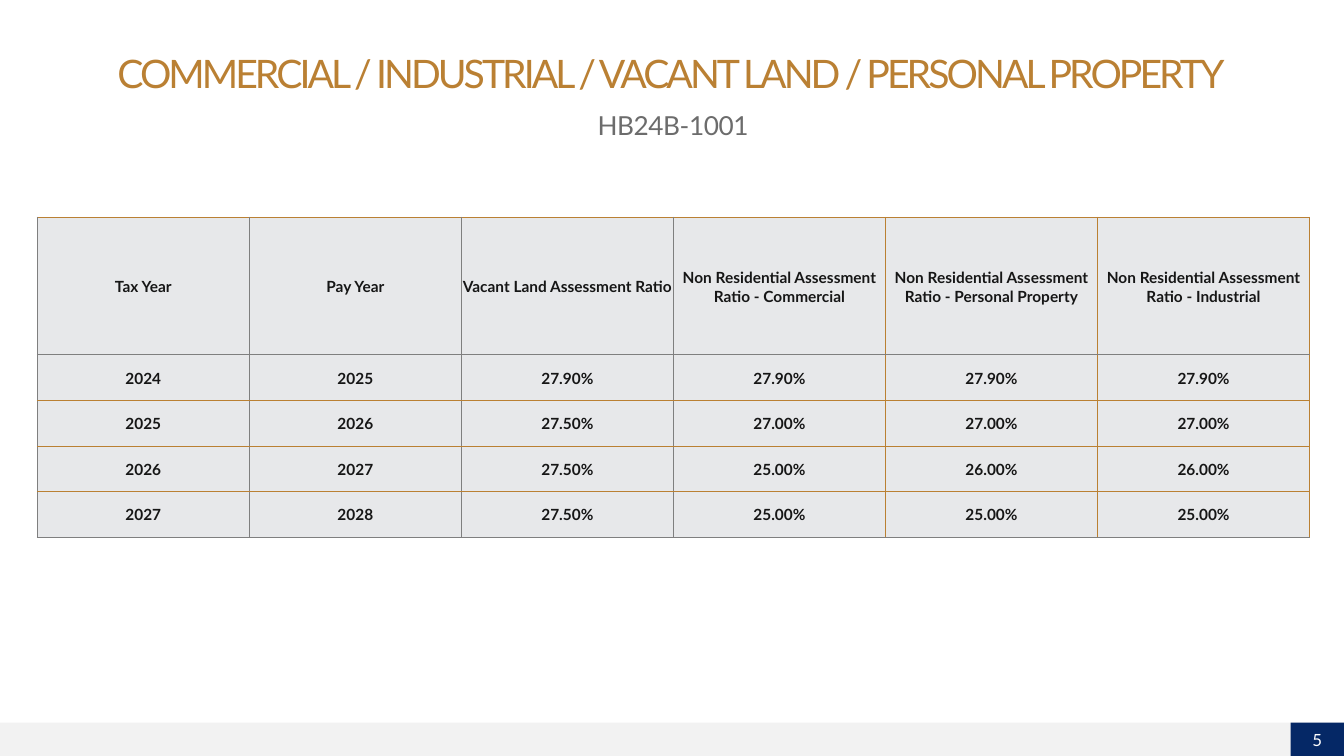
from lxml import etree
from pptx import Presentation
from pptx import util as u
from pptx.dml.color import RGBColor
from pptx.enum import shapes, text
from pptx.oxml.ns import qn

FONT = "Lato"
GOLD, GRAY = "BA8033", "7F7F7F"
HEADINGS = [
    "Tax Year", "Pay Year", "Vacant Land Assessment Ratio",
    "Non Residential Assessment Ratio - Commercial",
    "Non Residential Assessment Ratio - Personal Property",
    "Non Residential Assessment Ratio - Industrial",
]
RATIOS = [
    ["2024", "2025", "27.90%", "27.90%", "27.90%", "27.90%"],
    ["2025", "2026", "27.50%", "27.00%", "27.00%", "27.00%"],
    ["2026", "2027", "27.50%", "25.00%", "26.00%", "26.00%"],
    ["2027", "2028", "27.50%", "25.00%", "25.00%", "25.00%"],
]


def color(hex_code):
    return RGBColor.from_string(hex_code)


def inches(box):
    return [u.Inches(length) for length in box]


def write(frame, words, size, hex_code, bold=False, tracking=0, line_spacing=1.0):
    """Write one centred run; tracking is in points."""
    paragraph = frame.paragraphs[0]
    paragraph.alignment = text.PP_ALIGN.CENTER
    paragraph.line_spacing = line_spacing
    paragraph.space_before = u.Pt(0)
    run = paragraph.add_run()
    run.text = words
    run.font.name = FONT
    run.font.size = u.Pt(size)
    run.font.bold = bold
    run.font.color.rgb = color(hex_code)
    if tracking:
        run.font._element.set("spc", str(round(tracking * 100)))


def add_band(slide, box, hex_code):
    band = slide.shapes.add_shape(shapes.MSO_SHAPE.RECTANGLE, *inches(box))
    band.shadow.inherit = False
    band.fill.solid()
    band.fill.fore_color.rgb = color(hex_code)
    band.line.fill.background()
    return band


def add_footer(slide, box, number):
    left, top, width, height = box
    number_width = 0.53
    add_band(slide, box, "F2F2F2")
    number_box = (left + width - number_width, top, number_width, height)
    frame = add_band(slide, number_box, "052866").text_frame
    frame.word_wrap = False
    frame.vertical_anchor = text.MSO_ANCHOR.MIDDLE
    write(frame, number, 12, "FFFFFF")


def add_heading(slide, box, headline, bill):
    left, top, width, height = box
    title = slide.shapes.title
    title.left, title.top, title.width, title.height = inches(box)
    subtitle = slide.shapes.add_textbox(*inches((left + 0.02, top + 0.56, width, 0.49)))
    for frame in (title.text_frame, subtitle.text_frame):
        frame.word_wrap = True
        frame.auto_size = text.MSO_AUTO_SIZE.NONE
        frame.vertical_anchor = text.MSO_ANCHOR.TOP
    write(title.text_frame, headline, 28, GOLD, tracking=-2.1, line_spacing=0.85)
    write(subtitle.text_frame, bill, 18.7, "6C6C6C", tracking=-0.3, line_spacing=0.89)


def set_borders(cell, edges):
    """Draw the edges, given as (side, colour, points) in the order L, R, T, B."""
    properties = cell._tc.get_or_add_tcPr()
    for position, (side, hex_code, points) in enumerate(edges):
        line = etree.Element(qn(f"a:ln{side}"), w=str(u.Pt(points)))
        fill = etree.SubElement(line, qn("a:solidFill"))
        etree.SubElement(fill, qn("a:srgbClr"), val=hex_code)
        properties.insert(position, line)


def vertical_rule(column):
    return (GOLD, 1.25) if column > 3 else (GRAY, 0.75)


def horizontal_rule(row, last):
    if row == 0:
        return GOLD, 1.25
    return (GRAY if row in (1, last) else GOLD), 0.75


def add_ratio_table(slide, box, rows, header_height):
    width, height = box[2:]
    row_count, column_count = len(rows), len(rows[0])
    table = slide.shapes.add_table(row_count, column_count, *inches(box)).table
    table.first_row = table.horz_banding = False
    for column in table.columns:
        column.width = u.Inches(width / column_count)
    for index, row in enumerate(table.rows):
        body_height = (height - header_height) / (row_count - 1)
        row.height = u.Inches(body_height if index else header_height)
    for r, row in enumerate(rows):
        for c, words in enumerate(row):
            cell = table.cell(r, c)
            cell.margin_left = cell.margin_right = cell.margin_top = u.Inches(0.01)
            cell.margin_bottom = 0
            cell.vertical_anchor = text.MSO_ANCHOR.MIDDLE
            cell.fill.solid()
            cell.fill.fore_color.rgb = color("E7E8EA")
            write(cell.text_frame, words, 11, "161616", bold=True)
            set_borders(cell, [
                ("L", *vertical_rule(c)),
                ("R", *vertical_rule(c + 1)),
                ("T", *horizontal_rule(r, row_count)),
                ("B", *horizontal_rule(r + 1, row_count)),
            ])


def main():
    deck = Presentation()
    deck.slide_width, deck.slide_height = u.Inches(13.33), u.Inches(7.5)
    slide = deck.slides.add_slide(deck.slide_layouts[5])
    add_footer(slide, (0, 7.17, 13.33, 0.33), "5")
    add_heading(slide, (0.8, 0.51, 11.71, 1.06),
                "COMMERCIAL / INDUSTRIAL / VACANT LAND / PERSONAL PROPERTY", "HB24B-1001")
    add_ratio_table(slide, (0.37, 2.16, 12.62, 3.17), [HEADINGS, *RATIOS], 1.36)
    deck.save("out.pptx")


if __name__ == "__main__":
    main()
